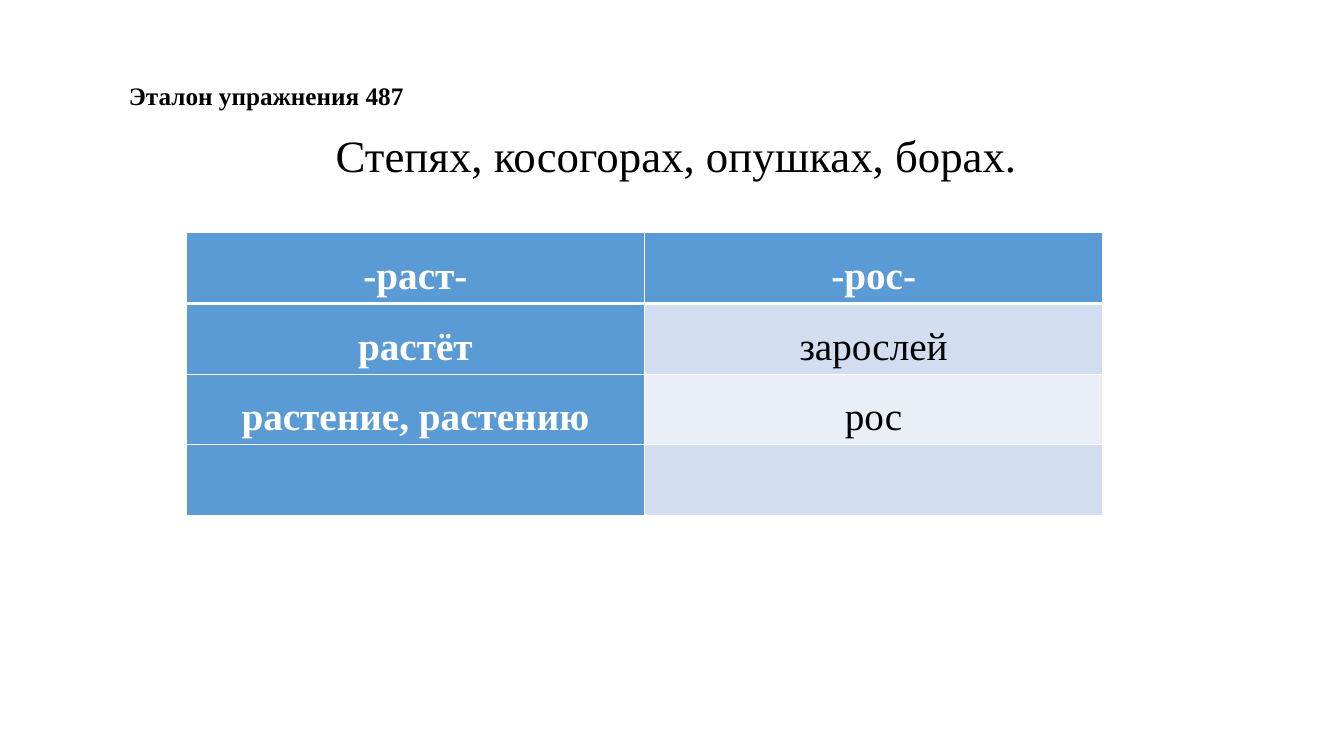
from lxml.etree import SubElement
from pptx import Presentation
from pptx.dml.color import RGBColor
from pptx.enum.text import MSO_ANCHOR, MSO_AUTO_SIZE, PP_ALIGN
from pptx.oxml.ns import qn
from pptx.util import Inches, Pt

FONT = "Times New Roman"
BLACK = "000000"
WHITE = "FFFFFF"
BLUE = "5B9BD5"
BANDS = ["D2DEEF", "EAEFF7"]
ROWS = [
    ("-раст-", "-рос-"),
    ("растёт", "зарослей"),
    ("растение, растению", "рос"),
    ("", ""),
]
COLUMN_WIDTHS = [4.54, 4.55]
ROW_HEIGHT = 0.7


def color(value):
    return RGBColor.from_string(value)


def style_paragraph(paragraph, size, font_color, bold):
    paragraph.font.name = FONT
    paragraph.font.size = Pt(size)
    paragraph.font.bold = bold
    paragraph.font.color.rgb = color(font_color)


def add_text(slide, text, left, top, width, height, size, bold=False):
    shape = slide.shapes.add_textbox(
        Inches(left), Inches(top), Inches(width), Inches(height)
    )
    frame = shape.text_frame
    frame.word_wrap = False
    frame.auto_size = MSO_AUTO_SIZE.SHAPE_TO_FIT_TEXT
    paragraph = frame.paragraphs[0]
    paragraph.text = text
    style_paragraph(paragraph, size, BLACK, bold)
    return paragraph


def set_borders(cell, widths):
    properties = cell._tc.get_or_add_tcPr()
    for position, (side, width) in enumerate(widths.items()):
        line = SubElement(properties, qn(f"a:{side}"), w=str(Pt(width)))
        fill = SubElement(line, qn("a:solidFill"))
        SubElement(fill, qn("a:srgbClr"), val=WHITE)
        properties.insert(position, line)


def fill_cell(cell, text, row, column):
    accented = row == 0 or column == 0
    cell.fill.solid()
    cell.fill.fore_color.rgb = color(BLUE if accented else BANDS[(row - 1) % 2])
    cell.margin_left = cell.margin_right = Inches(0.07)
    cell.margin_top = cell.margin_bottom = 0
    cell.vertical_anchor = MSO_ANCHOR.TOP
    paragraph = cell.text_frame.paragraphs[0]
    paragraph.text = text
    paragraph.alignment = PP_ALIGN.CENTER
    paragraph.line_spacing = 1.5
    style_paragraph(paragraph, 28, WHITE if accented else BLACK, accented)
    set_borders(cell, {
        "lnL": 1,
        "lnR": 1,
        "lnT": 3 if row == 1 else 1,
        "lnB": 3 if row == 0 else 1,
    })


def add_word_table(slide, left, top):
    table = slide.shapes.add_table(
        len(ROWS), len(COLUMN_WIDTHS), Inches(left), Inches(top),
        Inches(sum(COLUMN_WIDTHS)), Inches(ROW_HEIGHT * len(ROWS))
    ).table
    table.first_col = True
    for column, width in zip(table.columns, COLUMN_WIDTHS):
        column.width = Inches(width)
    for row, texts in enumerate(ROWS):
        table.rows[row].height = Inches(ROW_HEIGHT)
        for column, text in enumerate(texts):
            fill_cell(table.cell(row, column), text, row, column)


def main():
    presentation = Presentation()
    presentation.slide_width = Inches(13.33)
    presentation.slide_height = Inches(7.5)
    slide = presentation.slides.add_slide(presentation.slide_layouts[6])
    answer = add_text(
        slide, "Степях, косогорах, опушках, борах.", 2.74, 0.95, 7.52, 0.82, 32
    )
    answer.alignment = PP_ALIGN.JUSTIFY
    answer.line_spacing = 1.5
    answer._p.get_or_add_pPr().set("indent", str(Inches(0.49)))
    add_text(slide, "Эталон упражнения 487", 1.18, 0.75, 2.95, 0.4, 18, True)
    add_word_table(slide, 1.85, 2.31)
    presentation.save("out.pptx")


if __name__ == "__main__":
    main()
